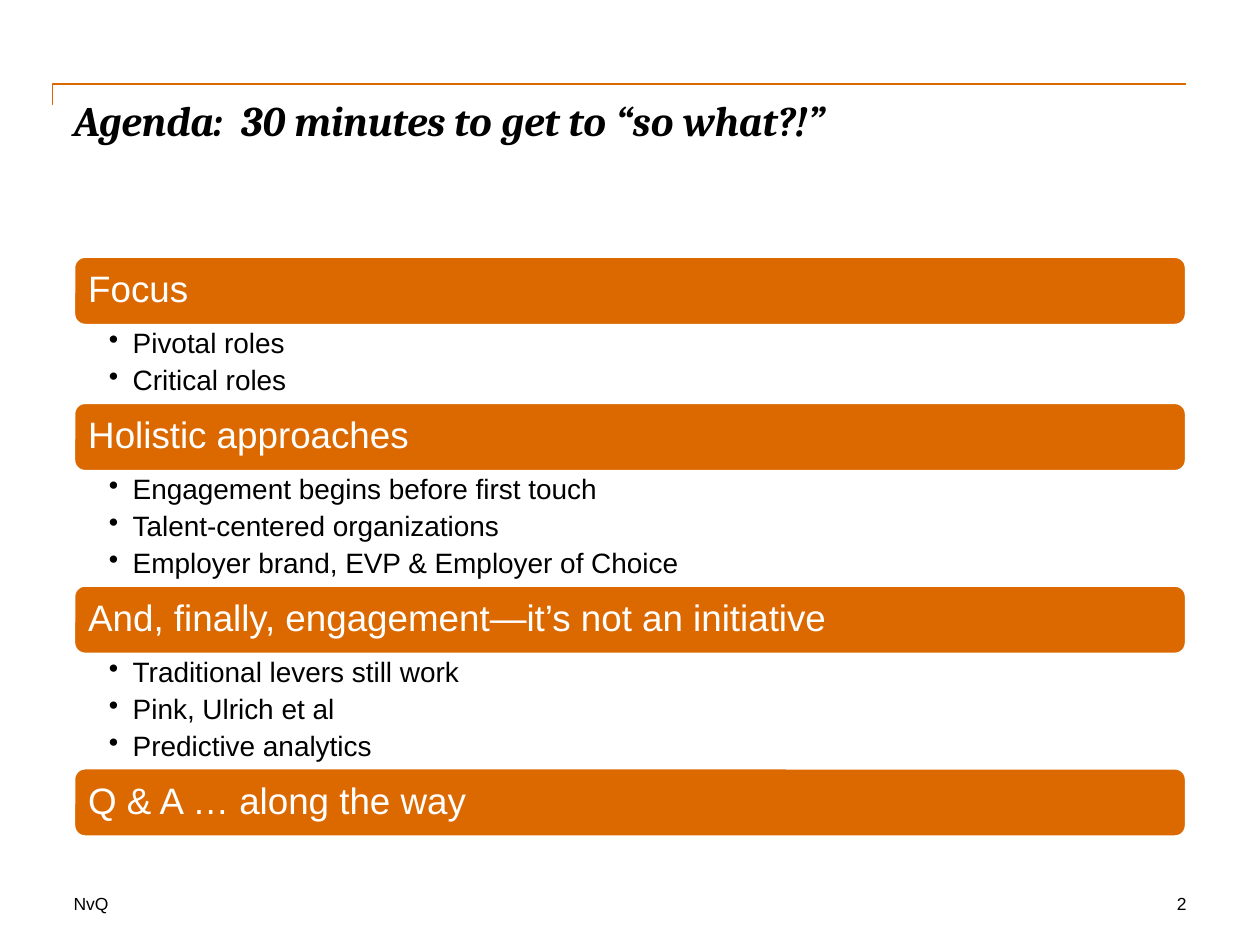
from lxml import etree
from pptx import Presentation
from pptx import util as u
from pptx.dml.color import RGBColor
from pptx.enum import shapes, text
from pptx.oxml.ns import qn

COLORS = {"accent": "DC6900", "ink": "000000", "paper": "FFFFFF"}
CELL = u.Inches(10) / 120
HEADER_ROWS = 6.6
BULLET_ROWS = 3.48
LIST_PAD_ROWS = 0.36
AGENDA = [
    ("Focus", ["Pivotal roles", "Critical roles"]),
    ("Holistic approaches", [
        "Engagement begins before first touch",
        "Talent-centered organizations",
        "Employer brand, EVP & Employer of Choice",
    ]),
    ("And, finally, engagement—it’s not an initiative", [
        "Traditional levers still work", "Pink, Ulrich et al", "Predictive analytics",
    ]),
    ("Q & A … along the way", []),
]


def cells(*counts):
    """Convert grid cells to slide lengths."""
    return [u.Emu(round(n * CELL)) for n in counts]


def rgb(name):
    """Look up a named colour."""
    return RGBColor.from_string(COLORS[name])


def set_frame(tf, insets, anchor=text.MSO_ANCHOR.TOP):
    """Set wrapping, anchor and insets (left, top, right, bottom) in inches."""
    tf.word_wrap = True
    tf.auto_size = text.MSO_AUTO_SIZE.NONE
    tf.vertical_anchor = anchor
    tf.margin_left, tf.margin_top, tf.margin_right, tf.margin_bottom = map(u.Inches, insets)


def write(p, words, size, color="ink", font="Arial", align=text.PP_ALIGN.LEFT):
    """Fill a paragraph and format it."""
    p.text = words
    p.alignment = align
    p.font.name = font
    p.font.size = u.Pt(size)
    p.font.color.rgb = rgb(color)


def add_bullet(p):
    """Give a paragraph a round bullet with a hanging indent."""
    pPr = p._p.get_or_add_pPr()
    pPr.set("marL", str(u.Inches(0.19)))
    pPr.set("indent", str(-u.Inches(0.19)))
    bullet = etree.Element(qn("a:buChar"), char="•")
    pPr.insert_element_before(bullet, "a:tabLst", "a:defRPr", "a:extLst")


def add_title(s, box, words):
    """Place the slide title."""
    sp = s.shapes.title
    sp.left, sp.top, sp.width, sp.height = cells(*box)
    set_frame(sp.text_frame, (0, 0, 0, 0))
    p = sp.text_frame.paragraphs[0]
    write(p, words, 24, font="Cambria")
    p.font.bold = p.font.italic = True


def add_rule(s, box):
    """Draw the title rule with its short drop at the left."""
    x, y, w, h = box
    builder = s.shapes.build_freeform(*cells(x, y + h))
    builder.add_line_segments([cells(x, y), cells(x + w, y)], close=False)
    sp = builder.convert_to_shape()
    sp.shadow.inherit = False
    sp.fill.background()
    sp.line.color.rgb = rgb("accent")
    sp.line.width = u.Pt(1)


def add_header(s, box, words):
    """Draw one agenda heading bar."""
    sp = s.shapes.add_shape(shapes.MSO_SHAPE.ROUNDED_RECTANGLE, *cells(*box))
    sp.shadow.inherit = False
    sp.fill.solid()
    sp.fill.fore_color.rgb = rgb("accent")
    sp.line.color.rgb = rgb("paper")
    sp.line.width = u.Pt(2)
    set_frame(sp.text_frame, (0.09,) * 4, text.MSO_ANCHOR.MIDDLE)
    p = sp.text_frame.paragraphs[0]
    write(p, words, 21, "paper")
    p.line_spacing = 0.9


def add_list(s, box, items):
    """Place the bullets below a heading bar."""
    tf = s.shapes.add_textbox(*cells(*box)).text_frame
    set_frame(tf, (0.28, 0.03, 0.16, 0.03))
    for i, item in enumerate(items):
        p = tf.add_paragraph() if i else tf.paragraphs[0]
        write(p, item, 16)
        p.level = 1
        p.line_spacing = 0.9
        p.space_after = u.Pt(4)
        add_bullet(p)


def add_agenda(s, box, sections):
    """Stack headings and lists from the top of the box."""
    x, y, w = box
    for heading, items in sections:
        add_header(s, (x, y, w, HEADER_ROWS), heading)
        y += HEADER_ROWS
        if items:
            height = LIST_PAD_ROWS + BULLET_ROWS * len(items)
            add_list(s, (x, y, w, height), items)
            y += height


def add_footer(s, box, company, number):
    """Place the company name and the page number at the two ends."""
    x, y, w, h = box
    parts = [(x, 34, company, text.PP_ALIGN.LEFT),
             (x + w - 20, 20, number, text.PP_ALIGN.RIGHT)]
    for left, width, words, align in parts:
        tf = s.shapes.add_textbox(*cells(left, y, width, h)).text_frame
        set_frame(tf, (0, 0, 0, 0))
        write(tf.paragraphs[0], words, 10, align=align)


def main():
    """Build and save the agenda slide."""
    prs = Presentation()
    prs.slide_width, prs.slide_height = cells(120, 90)
    s = prs.slides.add_slide(prs.slide_layouts[5])
    add_rule(s, (5, 8, 108, 2))
    add_title(s, (7, 9, 106, 12), "Agenda:  30 minutes to get to “so what?!”")
    add_agenda(s, (7, 24.4, 106), AGENDA)
    add_footer(s, (7, 85, 106, 2), "NvQ", "2")
    prs.save("out.pptx")


if __name__ == "__main__":
    main()
